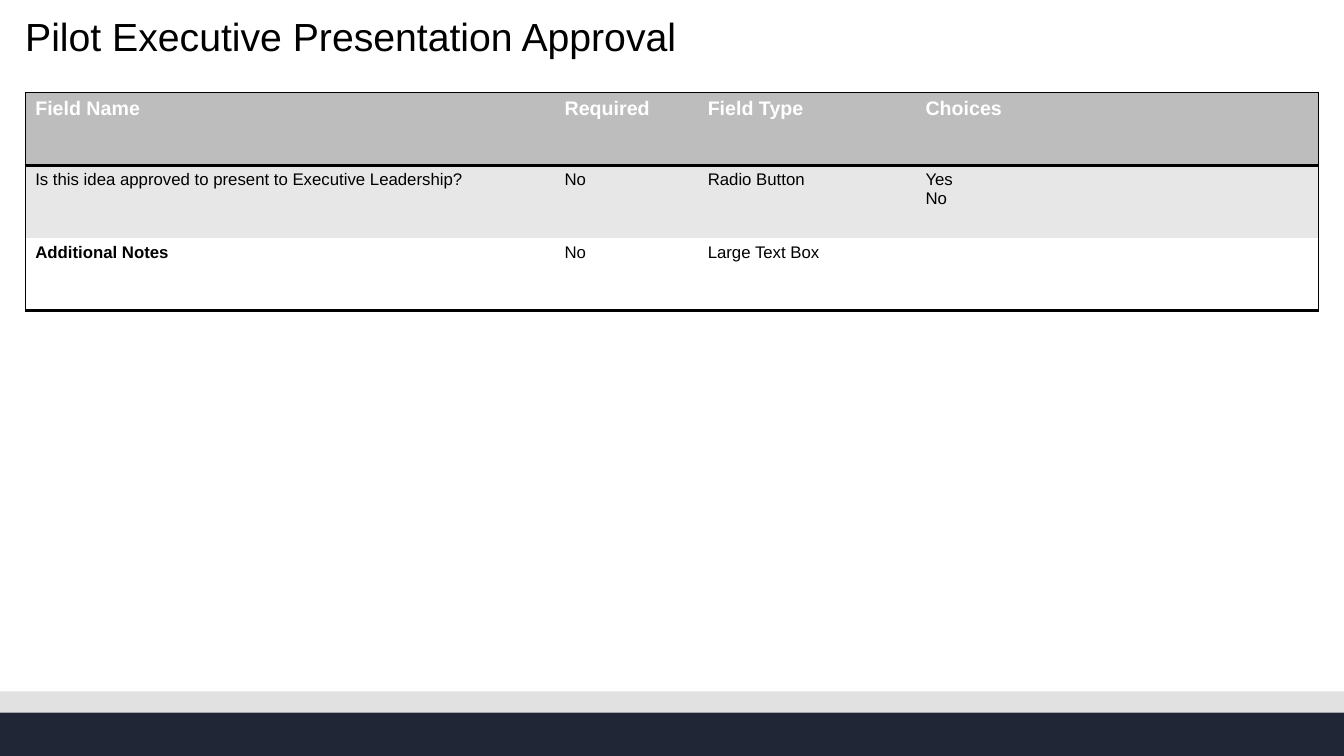
from lxml.etree import SubElement
from pptx import Presentation
from pptx.dml.color import RGBColor
from pptx.enum.shapes import MSO_SHAPE as Shape
from pptx.enum.text import MSO_ANCHOR as Anchor, MSO_AUTO_SIZE as AutoSize, PP_ALIGN as Align
from pptx.oxml.ns import qn
from pptx.util import Inches, Pt

FIELDS = [
    ["Field Name", "Required", "Field Type", "Choices"],
    ["Is this idea approved to present to Executive Leadership?", "No", "Radio Button", "Yes\nNo"],
    ["Additional Notes", "No", "Large Text Box", ""],
]
COLUMN_WIDTHS = [5.25, 1.42, 2.16, 4]
ROW_HEIGHT = 0.72
ROW_FILLS = ["BDBDBD", "E7E7E7", "FFFFFF"]
NO_GRID_STYLE = "{2D5ABB26-0587-4C30-8999-92F81FD0307C}"


def colour(hex_code):
    return RGBColor.from_string(hex_code)


class FormSlide:
    """Hold the style and the current slide, and add its elements."""

    font_name = "Arial"
    ink = "000000"

    def __init__(self, deck):
        self.slide = deck.slides.add_slide(deck.slide_layouts[5])

    def style_text(self, frame, size, hex_code, bold=False):
        for paragraph in frame.paragraphs:
            paragraph.alignment = Align.LEFT
            for font in [paragraph.font] + [run.font for run in paragraph.runs]:
                font.name = self.font_name
                font.size = Pt(size)
                font.bold = bold
                font.color.rgb = colour(hex_code)

    def title(self, text, left, top, width, height):
        heading = self.slide.shapes.title
        heading.left, heading.top = Inches(left), Inches(top)
        heading.width, heading.height = Inches(width), Inches(height)
        frame = heading.text_frame
        frame.text = text
        frame.auto_size = AutoSize.NONE
        frame.word_wrap = True
        frame.vertical_anchor = Anchor.TOP
        frame.margin_left = frame.margin_right = frame.margin_top = frame.margin_bottom = 0
        frame.paragraphs[0].line_spacing = 0.9
        self.style_text(frame, 28, self.ink)

    def band(self, top, height, hex_code):
        band = self.slide.shapes.add_shape(
            Shape.RECTANGLE, 0, Inches(top), Inches(13.33), Inches(height))
        band.shadow.inherit = False
        band.fill.solid()
        band.fill.fore_color.rgb = colour(hex_code)
        band.line.fill.background()

    def border(self, cell, widths):
        properties = cell._tc.get_or_add_tcPr()
        for position, (side, width) in enumerate(widths.items()):
            line = SubElement(properties, qn(f"a:ln{side}"), w=str(Pt(width)))
            fill = SubElement(line, qn("a:solidFill"))
            SubElement(fill, qn("a:srgbClr"), val=self.ink)
            properties.insert(position, line)

    def table(self, rows, left, top):
        grid = self.slide.shapes.add_table(
            len(rows), len(COLUMN_WIDTHS), Inches(left), Inches(top),
            Inches(sum(COLUMN_WIDTHS)), Inches(ROW_HEIGHT * len(rows))).table
        grid._tbl.tblPr.find(qn("a:tableStyleId")).text = NO_GRID_STYLE
        grid.horz_banding = False
        for column, width in zip(grid.columns, COLUMN_WIDTHS):
            column.width = Inches(width)
        last_row, last_column = len(rows) - 1, len(COLUMN_WIDTHS) - 1
        for r, row in enumerate(rows):
            grid.rows[r].height = Inches(ROW_HEIGHT)
            for c, text in enumerate(row):
                cell = grid.cell(r, c)
                cell.text_frame.text = text
                is_header = r == 0
                is_bold = is_header or text == "Additional Notes"
                self.style_text(cell.text_frame, 14 if is_header else 12,
                                "FFFFFF" if is_header else self.ink, is_bold)
                cell.fill.solid()
                cell.fill.fore_color.rgb = colour(ROW_FILLS[r])
                edges = {"L": (c == 0, 1), "R": (c == last_column, 1),
                         "T": (is_header, 1), "B": (r in (0, last_row), 2)}
                self.border(cell, {side: width for side, (shown, width) in edges.items() if shown})


def main():
    deck = Presentation()
    deck.slide_width, deck.slide_height = Inches(13.33), Inches(7.5)
    form = FormSlide(deck)
    form.band(6.86, 0.21, "E1E1E1")
    form.band(7.07, 0.43, "212637")
    form.title("Pilot Executive Presentation Approval", 0.25, 0.17, 10.79, 0.58)
    form.table(FIELDS, 0.25, 0.92)
    deck.save("out.pptx")


if __name__ == "__main__":
    main()
